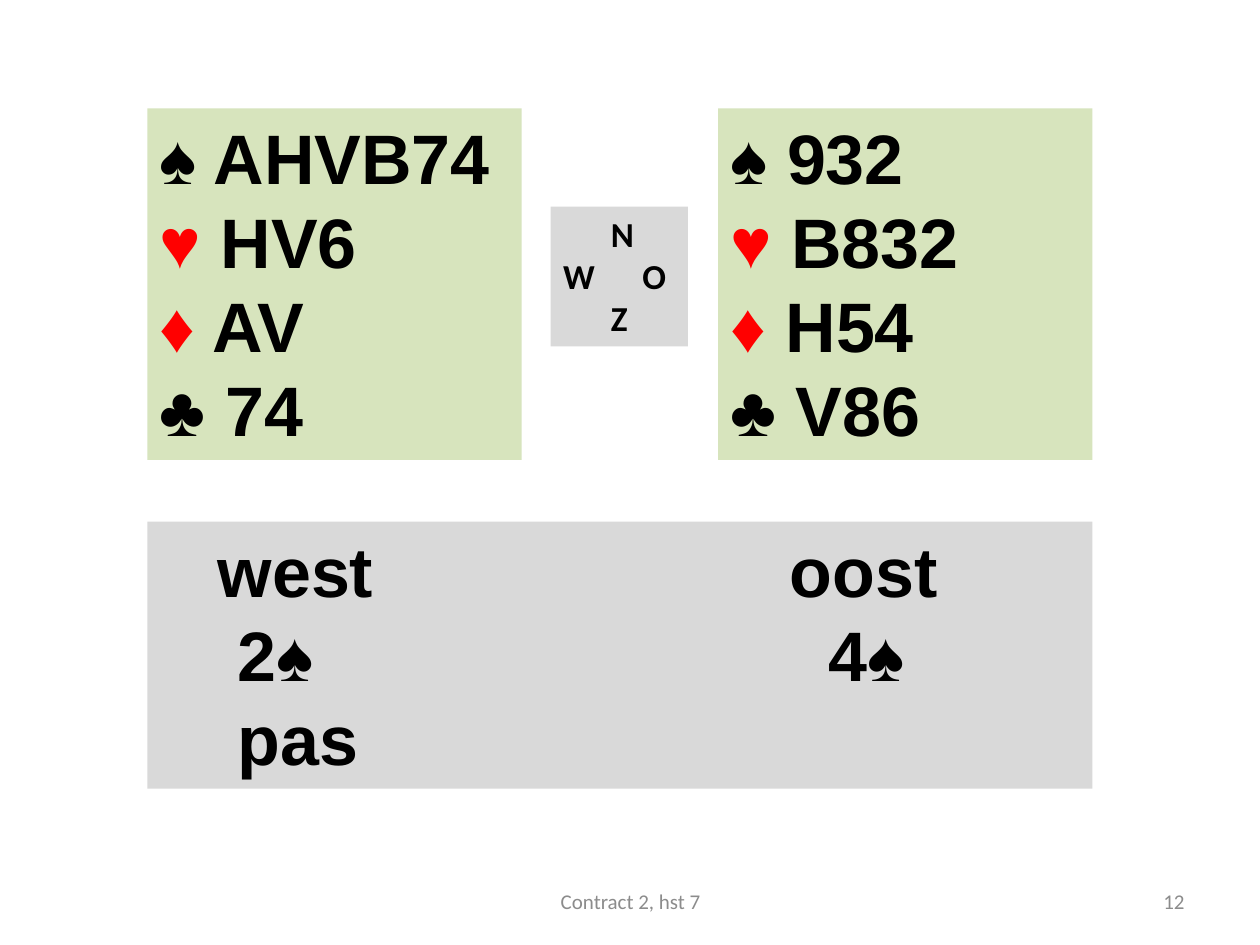
from lxml.etree import SubElement
from pptx import Presentation
from pptx.dml.color import RGBColor
from pptx.enum.shapes import MSO_SHAPE
from pptx.enum.text import MSO_ANCHOR, MSO_AUTO_SIZE, PP_ALIGN
from pptx.oxml.ns import qn
from pptx.util import Inches, Pt

WIDTH, HEIGHT = Inches(10), Inches(7.5)
BLACK, RED, GREY, GREEN, MUTED = "000000", "FF0000", "D9D9D9", "D7E4BD", "8C8C8C"
CARDS = {"name": "Arial", "size": Pt(40), "bold": True}
COMPASS = {"name": "Calibri", "size": Pt(20), "bold": True}
FOOTER = {"name": "Calibri", "size": Pt(12), "bold": False}
SUITS = {"♠": BLACK, "♥": RED, "♦": RED, "♣": BLACK}


def colour(hex_string):
    """Turn a hex string into a colour."""
    return RGBColor.from_string(hex_string)


def place(box):
    """Turn a box in percent of the slide into lengths."""
    left, top, width, height = box
    return [int(share * side / 100) for share, side in
            ((left, WIDTH), (top, HEIGHT), (width, WIDTH), (height, HEIGHT))]


def add_panel(slide, box, fill):
    """Add a flat filled rectangle and return its text frame."""
    panel = slide.shapes.add_shape(MSO_SHAPE.RECTANGLE, *place(box))
    panel.shadow.inherit = False
    panel.fill.solid()
    panel.fill.fore_color.rgb = colour(fill)
    panel.line.fill.background()
    settings = {"word_wrap": True, "vertical_anchor": MSO_ANCHOR.TOP,
                "auto_size": MSO_AUTO_SIZE.SHAPE_TO_FIT_TEXT}
    for key, value in settings.items():
        setattr(panel.text_frame, key, value)
    return panel.text_frame


def add_line(frame, index, pieces, style, align=PP_ALIGN.LEFT, stops=()):
    """Write one paragraph of coloured pieces with tab stops in percent of the width."""
    line = frame.add_paragraph() if index else frame.paragraphs[0]
    line.alignment = align
    if stops:
        tabs = SubElement(line._p.get_or_add_pPr(), qn("a:tabLst"))
        for stop in stops:
            SubElement(tabs, qn("a:tab"), pos=str(int(stop * WIDTH / 100)), algn="l")
    for text, ink in pieces:
        run = line.add_run()
        run.text = text
        run.font.color.rgb = colour(ink)
        for key, value in style.items():
            setattr(run.font, key, value)


def add_hand(slide, box, holdings):
    """Show one player's cards, a suit on each line."""
    frame = add_panel(slide, box, GREEN)
    for index, ((suit, ink), cards) in enumerate(zip(SUITS.items(), holdings)):
        add_line(frame, index, [(suit, ink), (f" {cards}", BLACK)], CARDS)


def add_tabbed_panel(slide, box, rows, style):
    """Show rows of text set at tab stops on a grey panel."""
    frame = add_panel(slide, box, GREY)
    for index, (text, stops) in enumerate(rows):
        add_line(frame, index, [(text, BLACK)], style, stops=stops)


def add_footer(slide, box, text, align):
    """Add a small muted line at the foot of the slide."""
    frame = slide.shapes.add_textbox(*place(box)).text_frame
    frame.word_wrap = True
    frame.vertical_anchor = MSO_ANCHOR.MIDDLE
    add_line(frame, 0, [(text, MUTED)], FOOTER, align)


def main():
    """Build the bridge deal slide."""
    deck = Presentation()
    deck.slide_width, deck.slide_height = WIDTH, HEIGHT
    slide = deck.slides.add_slide(deck.slide_layouts[6])

    hands = {11.7: ("AHVB74", "HV6", "AV", "74"), 57: ("932", "B832", "H54", "V86")}
    for left, holdings in hands.items():
        add_hand(slide, (left, 11.47, 29.7, 37.2), holdings)

    directions = [("\tN", [3.8]), ("W\tO", [6.3]), ("\tZ", [3.8])]
    add_tabbed_panel(slide, (43.7, 21.87, 10.9, 14.8), directions, COMPASS)

    bidding = [("\twest\toost", [4.6, 50]), ("\t2♠\t4♠", [6.2, 53.1]), ("\tpas", [6.2])]
    add_tabbed_panel(slide, (11.7, 55.2, 75, 28.27), bidding, CARDS)

    add_footer(slide, (34.2, 92.67, 31.7, 5.33), "Contract 2, hst 7", PP_ALIGN.CENTER)
    add_footer(slide, (71.7, 92.67, 23.3, 5.33), "12", PP_ALIGN.RIGHT)
    deck.save("out.pptx")


if __name__ == "__main__":
    main()
